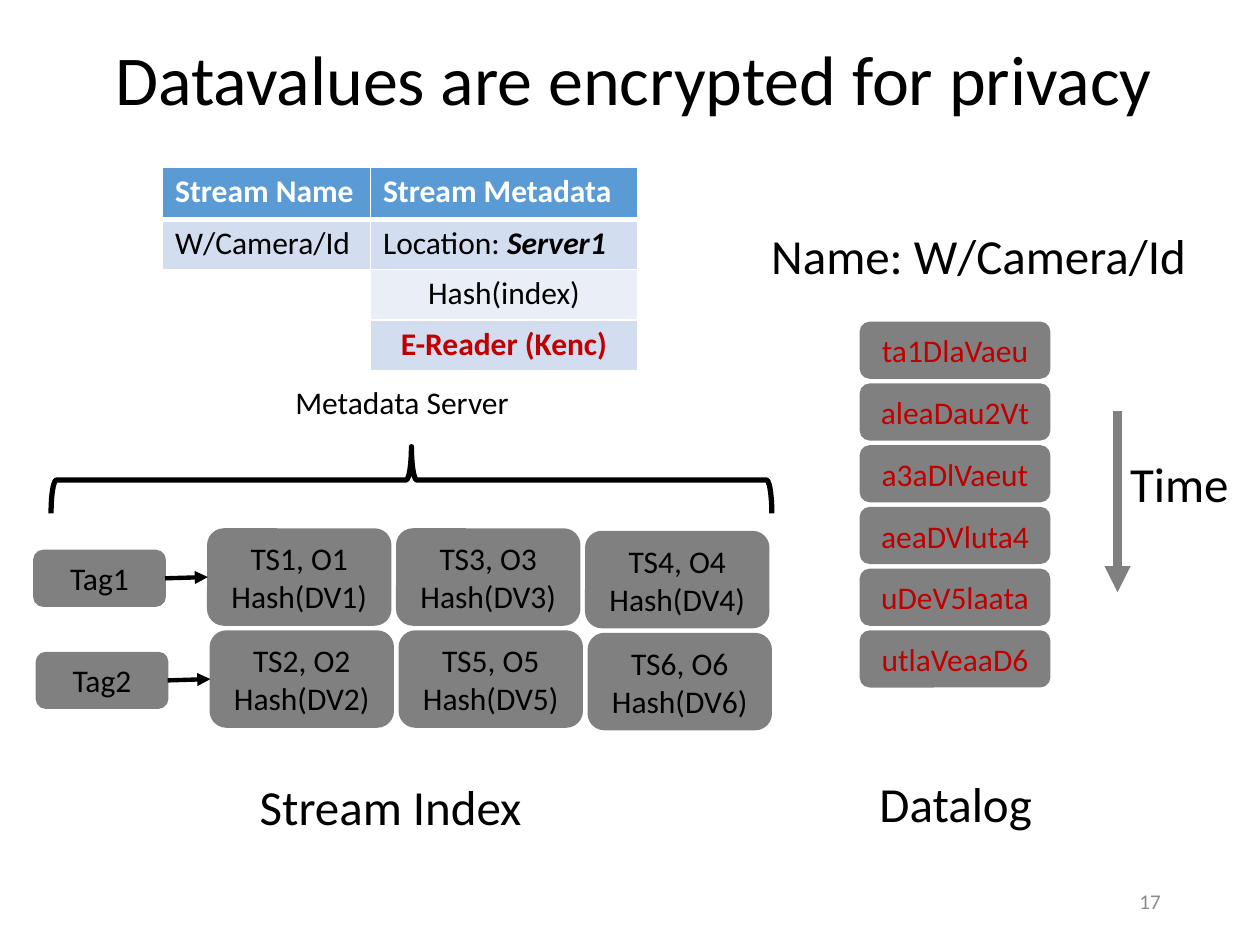
from lxml import etree
from pptx import Presentation
from pptx.dml.color import RGBColor
from pptx.enum.shapes import MSO_CONNECTOR, MSO_SHAPE
from pptx.enum.text import MSO_ANCHOR, PP_ALIGN
from pptx.oxml.ns import qn
from pptx.util import Inches, Pt

LEFT, MID, RIGHT = PP_ALIGN.LEFT, PP_ALIGN.CENTER, PP_ALIGN.RIGHT
TOP, HALF = MSO_ANCHOR.TOP, MSO_ANCHOR.MIDDLE
ROUND, BRACE = MSO_SHAPE.ROUNDED_RECTANGLE, MSO_SHAPE.LEFT_BRACE
STRAIGHT = MSO_CONNECTOR.STRAIGHT
FONT = "Calibri"
INK = {"black": "000000", "white": "FFFFFF", "gray": "808080", "red": "C00000",
       "pale": "8C8C8C", "head": "5B9BD5", "odd": "D2DEEF", "even": "EAEFF7"}


def color(name):
    """Return the named colour."""
    return RGBColor.from_string(INK[name])


def style(frame, size, ink="black", align=MID, bold=False):
    """Set the font and alignment of every paragraph in a frame."""
    for para in frame.paragraphs:
        para.alignment = align
        font = para.font
        font.name, font.size, font.bold = FONT, Pt(size), bold
        font.color.rgb = color(ink)


def label(slide, x, y, w, h, text, size=28, ink="black", align=MID, anchor=TOP):
    """Add a wrapped text box."""
    box = slide.shapes.add_textbox(Inches(x), Inches(y), Inches(w), Inches(h))
    frame = box.text_frame
    frame.word_wrap, frame.vertical_anchor = True, anchor
    frame.text = text
    style(frame, size, ink, align)


def block(slide, x, y, w, h, text, ink="black"):
    """Add a gray rounded block with centred text."""
    shape = slide.shapes.add_shape(ROUND, Inches(x), Inches(y), Inches(w), Inches(h))
    shape.shadow.inherit = False
    shape.fill.solid()
    shape.fill.fore_color.rgb = shape.line.color.rgb = color("gray")
    shape.line.width = Pt(1)
    frame = shape.text_frame
    frame.word_wrap, frame.vertical_anchor = True, HALF
    frame.text = text
    style(frame, 18, ink)
    return shape


def arrow(slide, x1, y1, x2, y2, ink, width):
    """Add a straight arrow."""
    line = slide.shapes.add_connector(
        STRAIGHT, Inches(x1), Inches(y1), Inches(x2), Inches(y2))
    line.line.color.rgb, line.line.width = color(ink), Pt(width)
    etree.SubElement(line.line._get_or_add_ln(), qn("a:tailEnd"), type="triangle")
    etree.SubElement(line._element.spPr, qn("a:effectLst"))
    return line


def border(cell, row):
    """Draw white cell borders, thick between the head and the body."""
    props = cell._tc.get_or_add_tcPr()
    for i, side in enumerate(("lnL", "lnR", "lnT", "lnB")):
        thick = (row, side) in ((0, "lnB"), (1, "lnT"))
        line = etree.Element(qn("a:" + side), w=str(Pt(3 if thick else 1)))
        fill = etree.SubElement(line, qn("a:solidFill"))
        etree.SubElement(fill, qn("a:srgbClr"), val=INK["white"])
        props.insert(i, line)


def server(slide, x, y):
    """Build the metadata table with its caption."""
    rows = (("Stream Name", "Stream Metadata"), ("W/Camera/Id", "Location: "),
            ("", "Hash(index)"), ("", "E-Reader (Kenc)"))
    fills = ("head", "odd", "even", "odd")
    table = slide.shapes.add_table(4, 2, Inches(x), Inches(y),
                                   Inches(3.77), Inches(1.61)).table
    for col, wide in zip(table.columns, (1.65, 2.12)):
        col.width = Inches(wide)
    for r, texts in enumerate(rows):
        table.rows[r].height = Inches(0.41 if r == 0 else 0.4)
        for c, text in enumerate(texts):
            cell = table.cell(r, c)
            cell.margin_top = cell.margin_bottom = Inches(0.04)
            cell.margin_right = Inches(0.05 if r < 2 else 0.1)
            cell.text = text
            if r < 2 or text:
                cell.fill.solid()
                cell.fill.fore_color.rgb = color(fills[r])
            else:
                cell.fill.background()
            ink = ("white", "black", "black", "red")[r]
            style(cell.text_frame, 18, ink, LEFT if r < 2 else MID, r in (0, 3))
            border(cell, r)
    run = table.cell(1, 1).text_frame.paragraphs[0].add_run()
    run.text = "Server1"
    run.font.bold = run.font.italic = True
    label(slide, x + 0.59, y + 1.66, 2.62, 0.4, "Metadata Server", 18)


def index(slide, x, y):
    """Build the brace, the tag rows and the caption of the index."""
    brace = slide.shapes.add_shape(BRACE, Inches(x + 2.73), Inches(y - 3.25),
                                   Inches(0.53), Inches(5.72))
    brace.shadow.inherit = False
    brace.rotation = 90
    brace.adjustments[0], brace.adjustments[1] = 0.08, 0.5
    brace.fill.background()
    brace.line.color.rgb, brace.line.width = color("black"), Pt(3)
    rows = (("Tag1", "TS1, O1\nHash(DV1)", "TS3, O3\nHash(DV3)", "TS4, O4 Hash(DV4)"),
            ("Tag2", "TS2, O2\nHash(DV2)", "TS5, O5\nHash(DV5)", "TS6, O6\nHash(DV6)"))
    for r, (name, *texts) in enumerate(rows):
        left, top = x + 0.02 * r, y + 0.81 * r
        tag = block(slide, left, top + 0.17, 1.04, 0.44, name)
        cells = [block(slide, left + 1.38 + 1.5 * c, top + (0.02 if c == 2 else 0),
                       1.45, 0.76, text) for c, text in enumerate(texts)]
        link = arrow(slide, left + 1.04, top + 0.39, left + 1.38, top + 0.38, "black", 2.5)
        link.begin_connect(tag, 3)
        link.end_connect(cells[0], 1)
    label(slide, x + 1.56, y + 1.91, 2.54, 0.57, "Stream Index")


def datalog(slide, x, y):
    """Build the stack of encrypted values with its time arrow."""
    label(slide, x - 0.84, y - 0.82, 3.55, 0.57, "Name: W/Camera/Id")
    values = ("ta1DlaVaeu", "aleaDau2Vt", "a3aDlVaeut",
              "aeaDVluta4", "uDeV5laata", "utlaVeaaD6")
    for i, text in enumerate(values):
        block(slide, x, y + 0.49 * i, 1.5, 0.44, text, "red")
    arrow(slide, x + 2.04, y + 0.7, x + 2.04, y + 2.14, "gray", 5)
    label(slide, x + 2.04, y + 0.99, 1.21, 0.57, "Time", align=LEFT)
    label(slide, x - 0.41, y + 3.53, 2.33, 0.57, "Datalog")


def main():
    """Build and save the slide."""
    deck = Presentation()
    deck.slide_width, deck.slide_height = Inches(10), Inches(7.5)
    slide = deck.slides.add_slide(deck.slide_layouts[6])
    label(slide, 0.29, 0.23, 9.48, 0.77, "Datavalues are encrypted for privacy", 40)
    datalog(slide, 6.83, 2.56)
    index(slide, 0.27, 4.2)
    server(slide, 1.29, 1.33)
    label(slide, 7.06, 6.95, 2.25, 0.4, "17", 12, "pale", RIGHT, HALF)
    deck.save("out.pptx")


if __name__ == "__main__":
    main()
